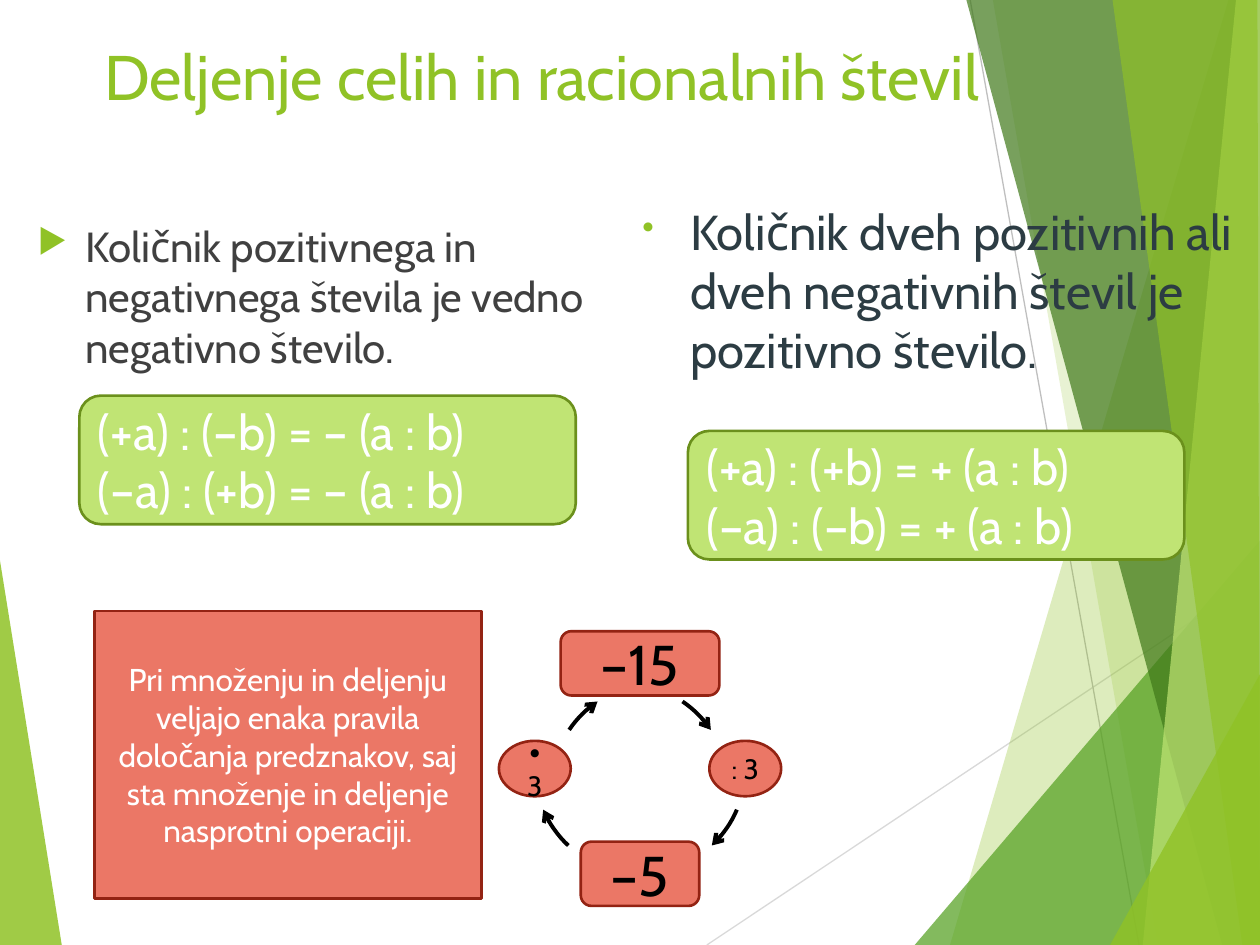
import math
from typing import NamedTuple

from lxml import etree
from pptx import Presentation
from pptx import util as u
from pptx.dml.color import RGBColor
from pptx.enum import shapes, text
from pptx.oxml import parse_xml
from pptx.oxml.ns import nsdecls, qn

FONT = "Cabin"
LIME, PALE, DARK, MOSS = "90C226", "C0E474", "3F7819", "6B901C"
CORAL, RUST, WHITE, BLACK = "EB7766", "932313", "FFFFFF", "000000"
ROUND = shapes.MSO_SHAPE.ROUNDED_RECTANGLE
OVAL = shapes.MSO_SHAPE.OVAL
RECT = shapes.MSO_SHAPE.RECTANGLE
LEFT, MID = text.PP_ALIGN.LEFT, text.PP_ALIGN.CENTER
RADIUS = 0.835


class Facet(NamedTuple):
    points: list
    color: str
    alpha: int


class Ray(NamedTuple):
    start: tuple
    end: tuple
    color: str


class Card(NamedTuple):
    kind: int
    rect: tuple
    fill: str
    edge: str
    words: str
    size: int
    color: str
    align: int
    inset: float


class Note(NamedTuple):
    rect: tuple
    words: str
    size: int
    color: str
    before: float = 0
    bullet: str = ""
    scale: int = 100


class Arc(NamedTuple):
    center: tuple
    start: float
    end: float


FACETS = [
    Facet([(0, 4.45), (0.49, 7.5), (0, 7.5)], LIME, 85),
    Facet([(9.75, 0), (7.54, 7.5), (10, 7.5), (10, 0)], LIME, 30),
    Facet([(7.88, 0), (9.19, 7.5), (10, 7.5), (10, 0)], LIME, 20),
    Facet([(7.26, 7.5), (10, 4.29), (10, 7.5)], "54A021", 72),
    Facet([(7.67, 0), (9.7, 7.5), (10, 7.5), (10, 0)], DARK, 70),
    Facet([(9.81, 0), (9.07, 7.5), (10, 7.5), (10, 0)], PALE, 70),
    Facet([(8.83, 0), (9.86, 7.5), (10, 7.5), (9.98, 0)], LIME, 65),
    Facet([(8.81, 7.5), (10, 5.35), (10, 7.5)], LIME, 80),
]
RAYS = [
    Ray((5.61, 7.5), (10, 4.57), "D9D9D9"),
    Ray((7.7, 0), (9.04, 7.5), "BFBFBF"),
]
NOTES = [
    Note((0.73, 0.25, 8.27, 0.84), "Deljenje celih in racionalnih števil", 36, LIME),
    Note((0.2, 1.7, 5.12, 2.44),
         "Količnik pozitivnega in negativnega števila je vedno negativno število.",
         24, "404040", 10, "▶", 80),
    Note((5, 1.55, 5, 2.44),
         "Količnik dveh pozitivnih ali dveh negativnih števil je pozitivno število.",
         28, "2C3C43", 5.6, "•", 70),
]


def rule(left: float, top: float, words: str) -> Card:
    return Card(ROUND, (left, top, 3.94, 1.02), PALE, MOSS, words, 28, WHITE, LEFT, 0.1)


def node(kind: int, rect: tuple, words: str, size: int, inset: float) -> Card:
    return Card(kind, rect, CORAL, RUST, words, size, BLACK, MID, inset)


CARDS = [
    rule(0.63, 3.14, "(+a) : (–b) = – (a : b)\n(–a) : (+b) = – (a : b)"),
    rule(5.46, 3.42, "(+a) : (+b) = + (a : b)\n(–a) : (–b) = + (a : b)"),
    Card(RECT, (0.75, 4.85, 3.07, 2.28), CORAL, RUST,
         "Pri množenju in deljenju veljajo enaka pravila določanja predznakov, "
         "saj sta množenje in deljenje nasprotni operaciji.", 18, WHITE, MID, 0.1),
    node(ROUND, (4.45, 5.01, 1.26, 0.51), "–15", 32, 0.13),
    node(OVAL, (5.63, 5.88, 0.57, 0.44), ": 3", 16, 0.07),
    node(ROUND, (4.61, 6.68, 0.94, 0.51), "–5", 32, 0.13),
    node(OVAL, (3.96, 5.88, 0.57, 0.44), "∙ 3", 16, 0.07),
]
ARCS = [
    Arc((4.95, 6.26), -56, -34),
    Arc((5.08, 6.1), 23, 47),
    Arc((5.08, 6.1), 133, 157),
    Arc((5.21, 6.26), 214, 236),
]


def paint(color: str) -> RGBColor:
    return RGBColor.from_string(color)


def inch(values: tuple) -> list:
    return [u.Inches(value) for value in values]


def style(frame, size: int, color: str, align: int = LEFT) -> None:
    frame.word_wrap = True
    for para in frame.paragraphs:
        para.alignment = align
        for run in para.runs:
            run.font.name = FONT
            run.font.size = u.Pt(size)
            run.font.color.rgb = paint(color)


def outline(slide, points: list, close: bool):
    spots = [inch(point) for point in points]
    pen = slide.shapes.build_freeform(*spots[0], scale=1.0)
    pen.add_line_segments(spots[1:], close=close)
    shape = pen.convert_to_shape()
    shape.shadow.inherit = False
    return shape


def draw_facet(slide, facet: Facet) -> None:
    shape = outline(slide, facet.points, True)
    shape.fill.solid()
    shape.fill.fore_color.rgb = paint(facet.color)
    shape.line.fill.background()
    tone = shape.fill._xPr.find(qn("a:solidFill"))[0]
    etree.SubElement(tone, qn("a:alpha")).set("val", str(facet.alpha * 1000))


def draw_ray(slide, ray: Ray) -> None:
    line = slide.shapes.add_connector(
        shapes.MSO_CONNECTOR.STRAIGHT, *inch(ray.start), *inch(ray.end))
    line.line.color.rgb = paint(ray.color)
    line.line.width = u.Pt(0.75)
    etree.SubElement(line._element.spPr, qn("a:effectLst"))


def draw_note(slide, note: Note) -> None:
    frame = slide.shapes.add_textbox(*inch(note.rect)).text_frame
    frame.text = note.words
    style(frame, note.size, note.color)
    if note.bullet:
        para = frame.paragraphs[0]
        para.space_before = u.Pt(note.before)
        props = para._p.get_or_add_pPr()
        props.set("marL", str(u.Inches(0.38)))
        props.set("indent", str(u.Inches(-0.38)))
        for part in (
            f'<a:buClr {nsdecls("a")}><a:srgbClr val="{LIME}"/></a:buClr>',
            f'<a:buSzPct {nsdecls("a")} val="{note.scale * 1000}"/>',
            f'<a:buChar {nsdecls("a")} char="{note.bullet}"/>',
        ):
            props.append(parse_xml(part))


def draw_card(slide, card: Card) -> None:
    shape = slide.shapes.add_shape(card.kind, *inch(card.rect))
    shape.shadow.inherit = False
    shape.fill.solid()
    shape.fill.fore_color.rgb = paint(card.fill)
    shape.line.color.rgb = paint(card.edge)
    shape.line.width = u.Pt(1.5)
    frame = shape.text_frame
    frame.text = card.words
    frame.vertical_anchor = text.MSO_ANCHOR.MIDDLE
    frame.margin_left = frame.margin_right = u.Inches(card.inset)
    frame.margin_top = frame.margin_bottom = u.Inches(0.05)
    style(frame, card.size, card.color, card.align)


def draw_arc(slide, arc: Arc, steps: int = 8) -> None:
    turns = [math.radians(arc.start + (arc.end - arc.start) * i / steps)
             for i in range(steps + 1)]
    across, down = arc.center
    shape = outline(slide, [(across + RADIUS * math.cos(turn),
                             down + RADIUS * math.sin(turn)) for turn in turns], False)
    shape.fill.background()
    shape.line.color.rgb = paint(BLACK)
    shape.line.width = u.Pt(2.25)
    etree.SubElement(shape.line._get_or_add_ln(), qn("a:tailEnd")).set("type", "arrow")


def main() -> None:
    deck = Presentation()
    deck.slide_width, deck.slide_height = inch((10, 7.5))
    slide = deck.slides.add_slide(deck.slide_layouts[6])
    for draw, items in ((draw_ray, RAYS), (draw_facet, FACETS), (draw_card, CARDS),
                        (draw_note, NOTES), (draw_arc, ARCS)):
        for item in items:
            draw(slide, item)
    deck.save("out.pptx")


if __name__ == "__main__":
    main()
